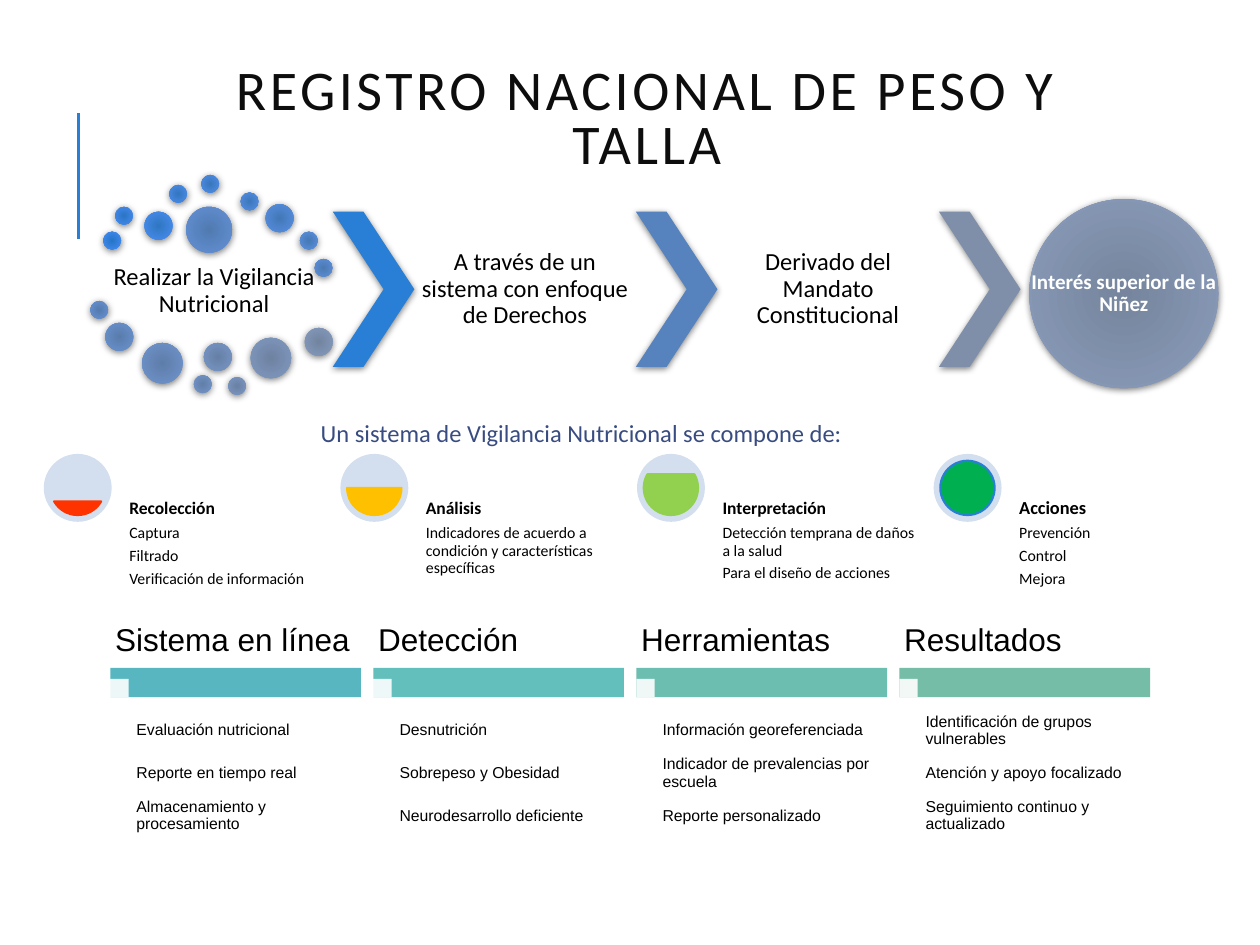
import pptx
import pptx.dml.color
import pptx.enum.shapes
import pptx.enum.text
import pptx.oxml.xmlchemy
import pptx.util
from lxml import etree

Pt = pptx.util.Pt
RGBColor = pptx.dml.color.RGBColor
SHAPE = pptx.enum.shapes.MSO_SHAPE
ALIGN = pptx.enum.text.PP_ALIGN
ANCHOR = pptx.enum.text.MSO_ANCHOR
DML = "{http://schemas.openxmlformats.org/drawingml/2006/main}"

BLACK = RGBColor(0x00, 0x00, 0x00)
WHITE = RGBColor(0xFF, 0xFF, 0xFF)
TITLE_INK = RGBColor(0x0D, 0x0D, 0x0D)
SUBTITLE_INK = RGBColor(0x38, 0x4C, 0x81)
BLUE = RGBColor(0x29, 0x7F, 0xD5)
MID_BLUE = RGBColor(0x56, 0x83, 0xBD)
GREY_BLUE = RGBColor(0x7F, 0x8F, 0xA9)
PALE_BLUE = RGBColor(0xD3, 0xDF, 0xEE)
RED = RGBColor(0xFF, 0x33, 0x00)
AMBER = RGBColor(0xFF, 0xC0, 0x00)
LIME = RGBColor(0x92, 0xD0, 0x50)
GREEN = RGBColor(0x00, 0xB0, 0x50)
TEALS = [RGBColor(0x58, 0xB6, 0xC0), RGBColor(0x62, 0xBF, 0xBB),
         RGBColor(0x6C, 0xBE, 0xB0), RGBColor(0x75, 0xBD, 0xA7)]

SMALL, MEDIUM, LARGE, LARGEST = 10.2, 16, 23.2, 26.2

# Left, top, diameter, centre colour, edge colour
DOTS = [
    (59, 132.4, SMALL, "2676C6", "458DF7"),
    (65.8, 118.2, SMALL, "2B76C4", "488DF4"),
    (82.6, 121, MEDIUM, "2F77C2", "4B8EF1"),
    (96.7, 105.7, SMALL, "3477BF", "4E8EED"),
    (115, 100, SMALL, "3977BC", "518FEA"),
    (137.5, 110, SMALL, "3E78BA", "548FE6"),
    (151.8, 116.7, MEDIUM, "4378B7", "5890E2"),
    (171.4, 132.4, SMALL, "4779B5", "5C91DF"),
    (179.8, 148, SMALL, "4C7AB2", "6091DC"),
    (106.4, 118.2, LARGEST, "507AB0", "6492D8"),
    (51.6, 172, SMALL, "557BAE", "6893D5"),
    (60.2, 184.5, MEDIUM, "597CAB", "6C94D2"),
    (81.2, 196, LARGE, "5E7DA9", "7095CE"),
    (110.8, 214.4, SMALL, "627FA7", "7596CB"),
    (116.5, 196, MEDIUM, "6680A5", "7997C8"),
    (130.4, 215.5, SMALL, "6A81A3", "7D99C5"),
    (143.2, 193, LARGE, "6E82A1", "829AC2"),
    (174.2, 187.4, MEDIUM, "72849F", "869BBF"),
    (588.2, 113.8, 108, "76859D", "8B9DBC"),
]

# Fill, outline, chord ends, heading, heading size, details
GAUGES = [
    (RED, RED, (18, 90), "Recolección", 10,
     ["Captura", "Filtrado", "Verificación de información"]),
    (AMBER, AMBER, (0, 108), "Análisis", 10,
     ["Indicadores de acuerdo a condición y características específicas"]),
    (LIME, LIME, (198, 126), "Interpretación", 10,
     ["Detección temprana de daños a la salud", "Para el diseño de acciones"]),
    (GREEN, BLUE, (162, 162), "Acciones", 10.5, ["Prevención", "Control", "Mejora"]),
]

LISTS = [
    ("Sistema en línea", ["Evaluación nutricional", "Reporte en tiempo real",
                          "Almacenamiento y procesamiento"]),
    ("Detección", ["Desnutrición", "Sobrepeso y Obesidad", "Neurodesarrollo deficiente"]),
    ("Herramientas", ["Información georeferenciada",
                      "Indicador de prevalencias por escuela", "Reporte personalizado"]),
    ("Resultados", ["Identificación de grupos vulnerables", "Atención y apoyo focalizado",
                    "Seguimiento continuo y actualizado"]),
]


def add_text(page, area, lines, size, font="Calibri", color=BLACK, bold=False,
             align=ALIGN.LEFT, anchor=ANCHOR.MIDDLE, inset=(1.4, 1.4),
             spacing=0.9, after=0.35, wrap=True, tracking=None):
    box = page.shapes.add_textbox(*map(Pt, area))
    frame = box.text_frame
    frame.word_wrap = wrap
    frame.vertical_anchor = anchor
    frame.margin_left = frame.margin_right = Pt(inset[0])
    frame.margin_top = frame.margin_bottom = Pt(inset[1])
    for index, line in enumerate(lines):
        para = frame.add_paragraph() if index else frame.paragraphs[0]
        para.alignment = align
        para.line_spacing = spacing
        para.space_after = Pt(round(size * after, 2))
        span = para.add_run()
        span.text = line
        span.font.name = font
        span.font.size = Pt(size)
        span.font.bold = bold
        span.font.color.rgb = color
        if tracking:
            span.font._element.set("spc", str(tracking * 100))


def add_shape(page, kind, area, fill=None, line=None, alpha=None):
    shape = page.shapes.add_shape(kind, *map(Pt, area))
    shape.shadow.inherit = False
    if fill is not None:
        shape.fill.solid()
        shape.fill.fore_color.rgb = fill
    if alpha is not None:
        color = shape._element.spPr.find(f".//{DML}srgbClr")
        etree.SubElement(color, f"{DML}alpha", val=str(alpha * 1000))
    if line is None:
        shape.line.fill.background()
    else:
        shape.line.color.rgb = line
        shape.line.width = Pt(1.25)
    return shape


def add_shadow(shape):
    effects = shape._element.spPr.find(f"{DML}effectLst")
    shadow = etree.SubElement(effects, f"{DML}outerShdw", blurRad=str(Pt(4)),
                              dist=str(Pt(1)), dir="5400000", rotWithShape="0")
    color = etree.SubElement(shadow, f"{DML}srgbClr", val="000000")
    etree.SubElement(color, f"{DML}alpha", val="50000")


def add_dot(page, left, top, size, centre, edge):
    dot = add_shape(page, SHAPE.OVAL, (left, top, size, size))
    dot.fill.gradient()
    for stop, color in zip(dot.fill.gradient_stops, (centre, edge)):
        stop.color.rgb = RGBColor.from_string(color)
    # Radial instead of linear
    gradient = dot._element.spPr.find(f"{DML}gradFill")
    gradient.remove(gradient.find(f"{DML}lin"))
    radial = etree.SubElement(gradient, f"{DML}path", path="circle")
    etree.SubElement(radial, f"{DML}fillToRect", l="50000", t="50000", r="50000", b="50000")
    for stop, position in zip(dot.fill.gradient_stops, (0, 1)):
        stop.position = position
    add_shadow(dot)


def add_header(page):
    rule = page.shapes.add_connector(pptx.enum.shapes.MSO_CONNECTOR.STRAIGHT,
                                     Pt(44.8), Pt(136.8), Pt(44.8), Pt(64.8))
    rule.line.color.rgb = BLUE
    rule.line.width = Pt(1.5)
    etree.SubElement(rule._element.spPr, f"{DML}effectLst")
    add_text(page, (80.6, 46.8, 578, 45.4), ["REGISTRO NACIONAL DE PESO Y TALLA"], 32,
             color=TITLE_INK, align=ALIGN.CENTER, inset=(7.2, 3.6),
             spacing=0.8, after=0, tracking=2)


def add_process(page):
    for dot in DOTS:
        add_dot(page, *dot)
    for index, color in enumerate((BLUE, MID_BLUE, GREY_BLUE)):
        chevron = add_shape(page, SHAPE.CHEVRON,
                            (190.2 + index * 173.2, 121, 46.6, 88.6), color)
        chevron.adjustments[0] = 0.623
        add_shadow(chevron)
    for area, label in [
        ((59, 145.4, 126.8, 41.8), "Realizar la Vigilancia Nutricional"),
        ((236.6, 121, 126.8, 88.6), "A través de un sistema con enfoque de Derechos"),
        ((409.8, 121, 126.8, 88.6), "Derivado del Mandato Constitucional"),
    ]:
        add_text(page, area, [label], 14, align=ALIGN.CENTER)
    add_text(page, (588.2, 113.8, 108, 108), ["Interés superior de la Niñez"], 12,
             color=WHITE, bold=True, align=ALIGN.CENTER, inset=(0, 0))


def add_gauge(page, left, fill, line, ends, heading, size, details):
    top = 259.4
    add_shape(page, SHAPE.OVAL, (left, top, 38.8, 38.8), PALE_BLUE)
    level = add_shape(page, SHAPE.CHORD, (left + 3.9, top + 3.9, 31, 31), fill, line)
    level.adjustments[0], level.adjustments[1] = ends
    add_text(page, (left + 46.9, top + 38.8, 114.6, 163), details, 9,
             anchor=ANCHOR.TOP, inset=(2, 2))
    add_text(page, (left + 46.9, top, 114.6, 38.8), [heading], size,
             bold=True, anchor=ANCHOR.BOTTOM, inset=(2, 2))


def add_list(page, left, color, heading, items):
    add_shape(page, SHAPE.RECTANGLE, (left, 381.6, 143.3, 16.8), color)
    add_shape(page, SHAPE.RECTANGLE, (left, 387.9, 10.5, 10.5), WHITE, alpha=90)
    add_text(page, (left, 351.4, 143.3, 30.2), [heading], 18, "Arial", inset=(2.8, 1.9))
    for row, item in enumerate(items):
        add_text(page, (left + 10, 405.2 + row * 24.5, 133.3, 24.5), [item], 9, "Arial",
                 inset=(5, 5))


def main():
    deck = pptx.Presentation()
    deck.slide_width, deck.slide_height = Pt(720), Pt(540)
    page = deck.slides.add_slide(deck.slide_layouts[6])

    # Title and process row
    add_header(page)
    add_process(page)

    # Parts of the system
    add_text(page, (160.6, 235.4, 343.4, 24.2),
             ["Un sistema de Vigilancia Nutricional se compone de:"], 14,
             color=SUBTITLE_INK, align=ALIGN.CENTER, anchor=ANCHOR.TOP,
             inset=(7.2, 3.6), spacing=1, after=0, wrap=False)
    for index, gauge in enumerate(GAUGES):
        add_gauge(page, 25 + index * 169.5, *gauge)

    # Feature lists
    for index, (color, column) in enumerate(zip(TEALS, LISTS)):
        add_list(page, 63 + index * 150.3, color, *column)

    deck.save("out.pptx")


if __name__ == "__main__":
    main()
